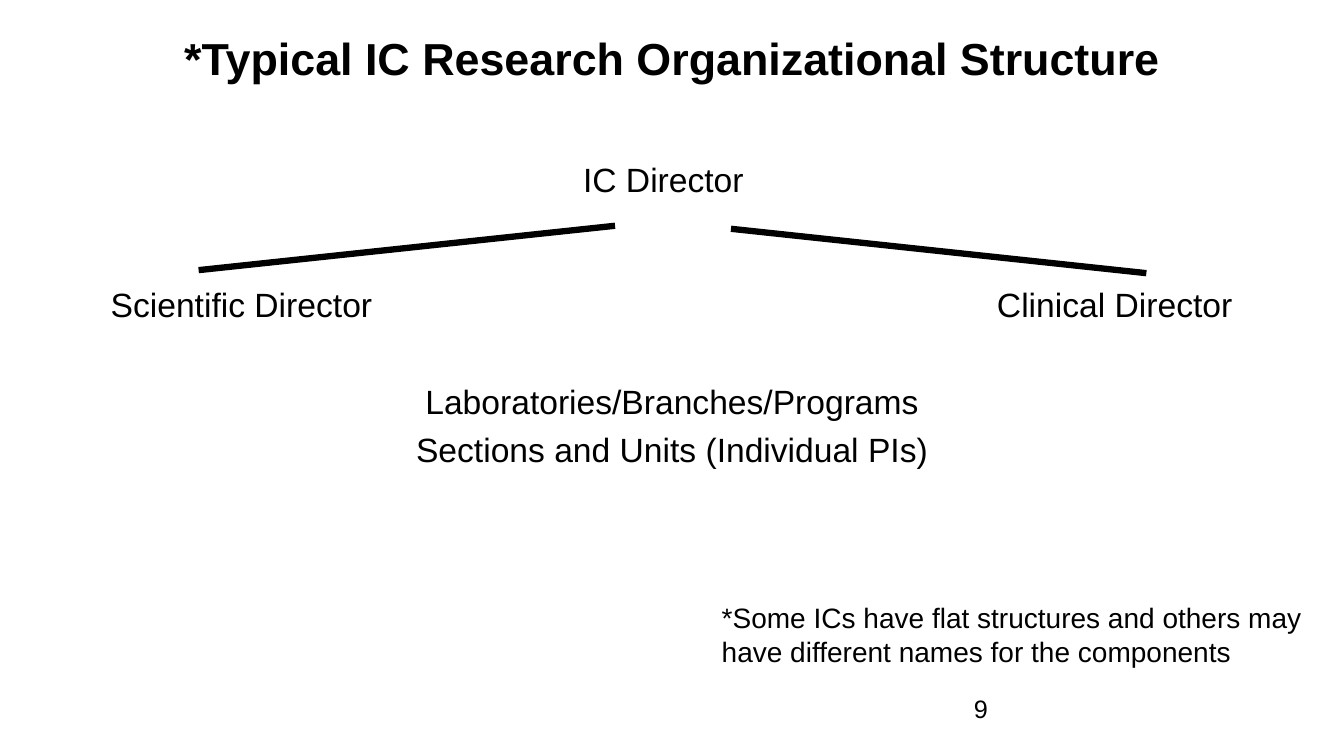
from pptx import Presentation
from pptx.dml.color import RGBColor
from pptx.enum.shapes import MSO_CONNECTOR
from pptx.enum.text import PP_ALIGN
from pptx.oxml.ns import qn
from pptx.util import Inches, Pt
from lxml.etree import SubElement


def color(hex_text):
    return RGBColor.from_string(hex_text)


class SlideBuilder:
    """Draws elements in one style on the current slide."""

    font_name = "Arial"
    ink = "000000"

    def __init__(self, deck):
        self.slide = deck.slides.add_slide(deck.slide_layouts[6])

    def text(self, left, top, width, height, lines, size, bold=False,
             align=PP_ALIGN.LEFT, wrap=True, inset=0.05):
        box = self.slide.shapes.add_textbox(
            Inches(left), Inches(top), Inches(width), Inches(height))
        frame = box.text_frame
        frame.word_wrap = wrap
        frame.margin_top = frame.margin_bottom = Inches(inset)
        for index, line in enumerate(lines):
            para = frame.paragraphs[0] if index == 0 else frame.add_paragraph()
            para.text = line
            para.alignment = align
            para.font.name = self.font_name
            para.font.size = Pt(size)
            para.font.bold = bold
            para.font.color.rgb = color(self.ink)
        return frame

    def tab_stop(self, para, position):
        properties = para._p.get_or_add_pPr()
        tabs = SubElement(properties, qn("a:tabLst"))
        SubElement(tabs, qn("a:tab"), pos=str(Inches(position)), algn="l")
        properties.insert(0, tabs)

    def line(self, start_x, start_y, end_x, end_y):
        connector = self.slide.shapes.add_connector(
            MSO_CONNECTOR.STRAIGHT, Inches(start_x), Inches(start_y),
            Inches(end_x), Inches(end_y))
        connector.line.color.rgb = color(self.ink)
        connector.line.width = Pt(4.5)
        SubElement(connector._element.spPr, qn("a:effectLst"))


def main():
    deck = Presentation()
    deck.slide_width, deck.slide_height = Inches(13.33), Inches(7.5)
    page = SlideBuilder(deck)

    page.text(0.67, 0.3, 12, 0.99,
              ["*Typical IC Research Organizational Structure"],
              32, bold=True, align=PP_ALIGN.CENTER, inset=0)

    body = page.text(1, 2.77, 11.33, 2.86,
                     ["Scientific Director\tClinical Director",
                      "Laboratories/Branches/Programs",
                      "Sections and Units (Individual PIs)"],
                     24, align=PP_ALIGN.CENTER)
    directors, laboratories, sections = body.paragraphs
    directors.alignment = PP_ALIGN.LEFT
    page.tab_stop(directors, 8.79)
    laboratories.space_before = Pt(40)
    sections.space_before = Pt(6)

    page.text(9.56, 6.83, 2.78, 0.5, ["9"], 18)
    page.line(7.25, 2.27, 11.37, 2.71)
    page.line(6.1, 2.24, 1.97, 2.68)
    page.text(5.2, 1.53, 2.76, 0.81, ["IC Director"], 24,
              align=PP_ALIGN.CENTER)
    page.text(7.06, 5.91, 6.07, 0.77,
              ["*Some ICs have flat structures and others may",
               "have different names for the components"],
              20, wrap=False)
    deck.save("out.pptx")


if __name__ == "__main__":
    main()
